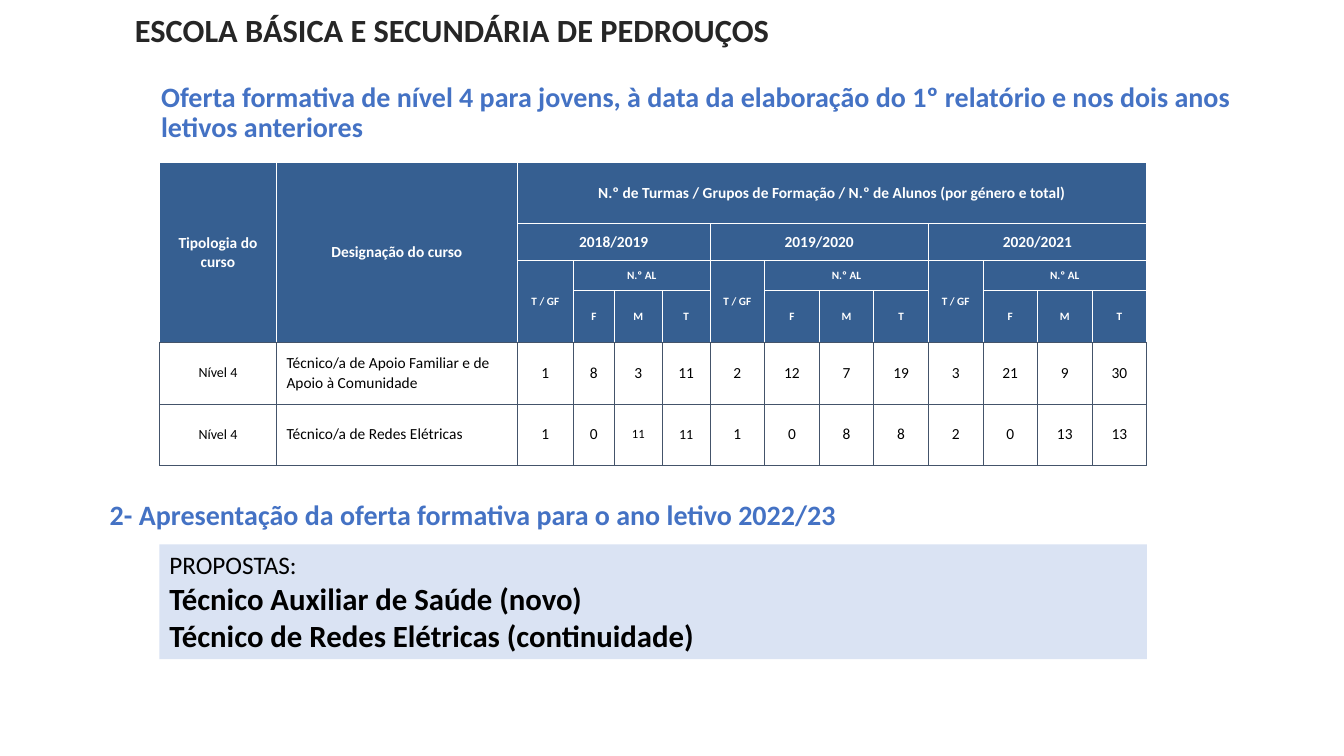
from lxml.etree import SubElement
from pptx import Presentation
from pptx.dml.color import RGBColor
from pptx.enum.shapes import MSO_SHAPE
from pptx.enum.text import MSO_ANCHOR, PP_ALIGN
from pptx.oxml.ns import qn
from pptx.util import Pt

WHITE = RGBColor(0xFF, 0xFF, 0xFF)
BLACK = RGBColor(0x00, 0x00, 0x00)
DARK = RGBColor(0x26, 0x26, 0x26)
BLUE = RGBColor(0x44, 0x72, 0xC4)
HEADER = RGBColor(0x36, 0x5F, 0x91)
SLATE = RGBColor(0x44, 0x54, 0x6A)
PALE = RGBColor(0xDA, 0xE3, 0xF3)


def add_run(p, text, size, color, bold):
    r = p.add_run()
    r.text = text
    r.font.name = "Calibri"
    r.font.size = Pt(size)
    r.font.color.rgb = color
    r.font.bold = bold


def set_border(cell, side, color):
    ln = SubElement(cell._tc.get_or_add_tcPr(), qn(f"a:ln{side}"), w=str(Pt(0.6)))
    fill = SubElement(ln, qn("a:solidFill"))
    SubElement(fill, qn("a:srgbClr"), val=str(color))


prs = Presentation()
prs.slide_width = Pt(960)
prs.slide_height = Pt(540)
s = prs.slides.add_slide(prs.slide_layouts[6])

headings = [
    ("ESCOLA BÁSICA E SECUNDÁRIA DE PEDROUÇOS",
     89.3, 3.6, 600, 34.6, 23.1, DARK, MSO_ANCHOR.TOP, 1),
    ("Oferta formativa de nível 4 para jovens, à data da elaboração do 1º relatório "
     "e nos dois anos letivos anteriores",
     108, 28.8, 785.5, 104.4, 20, BLUE, MSO_ANCHOR.MIDDLE, 0.9),
    ("2- Apresentação da oferta formativa para o ano letivo 2022/23",
     71.3, 352.1, 689.8, 31.7, 20, BLUE, MSO_ANCHOR.TOP, 1),
]
for text, left, top, width, height, size, color, anchor, spacing in headings:
    tf = s.shapes.add_textbox(Pt(left), Pt(top), Pt(width), Pt(height)).text_frame
    tf.word_wrap = True
    tf.vertical_anchor = anchor
    p = tf.paragraphs[0]
    p.line_spacing = spacing
    add_run(p, text, size, color, True)

col_widths = [83.6, 172.1, 40, 29.3, 34.2, 34.2] + [39] * 8
row_heights = [43.6, 26.2, 21.6, 36.7, 44.6, 43.2]
gf = s.shapes.add_table(len(row_heights), len(col_widths), Pt(113.9), Pt(116.2),
                        Pt(sum(col_widths)), Pt(sum(row_heights)))
table = gf.table
table.first_row = False
table.horz_banding = False
for col, width in zip(table.columns, col_widths):
    col.width = Pt(width)
for row, height in zip(table.rows, row_heights):
    row.height = Pt(height)

header = [
    (0, 0, 4, 1, "Tipologia do curso", 11),
    (0, 1, 4, 1, "Designação do curso", 11),
    (0, 2, 1, 12, "N.º de Turmas / Grupos de Formação / N.º de Alunos (por género e total)", 11),
]
for i, year in enumerate(["2018/2019", "2019/2020", "2020/2021"]):
    c = 2 + 4 * i
    header += [(1, c, 1, 4, year, 11), (2, c, 2, 1, "T / GF", 8), (2, c + 1, 1, 3, "N.º AL", 8)]
    header += [(3, c + 1 + j, 1, 1, label, 8) for j, label in enumerate("FMT")]

for r, c, rows, cols, text, size in header:
    cell = table.cell(r, c)
    if rows * cols > 1:
        cell.merge(table.cell(r + rows - 1, c + cols - 1))
    for side in "LRT":
        set_border(cell, side, WHITE)
    set_border(cell, "B", SLATE if r + rows == 4 else WHITE)
    cell.fill.solid()
    cell.fill.fore_color.rgb = HEADER
    cell.vertical_anchor = MSO_ANCHOR.MIDDLE
    p = cell.text_frame.paragraphs[0]
    p.alignment = PP_ALIGN.CENTER
    add_run(p, text, size, WHITE, True)

courses = [
    ["Nível 4", "Técnico/a de Apoio Familiar e de Apoio à Comunidade",
     1, 8, 3, 11, 2, 12, 7, 19, 3, 21, 9, 30],
    ["Nível 4", "Técnico/a de Redes Elétricas",
     1, 0, 11, 11, 1, 0, 8, 8, 2, 0, 13, 13],
]
small_sizes = {(4, 0): 10, (5, 0): 10, (5, 4): 9, (5, 5): 10}
for r, course in enumerate(courses, 4):
    for c, value in enumerate(course):
        cell = table.cell(r, c)
        for side in "LRTB":
            set_border(cell, side, SLATE)
        cell.fill.background()
        cell.vertical_anchor = MSO_ANCHOR.MIDDLE
        p = cell.text_frame.paragraphs[0]
        p.alignment = PP_ALIGN.LEFT if c == 1 else PP_ALIGN.CENTER
        add_run(p, str(value), small_sizes.get((r, c), 11), BLACK, False)

sp = s.shapes.add_shape(MSO_SHAPE.RECTANGLE, Pt(113.9), Pt(388.8), Pt(705.4), Pt(82.1))
sp.shadow.inherit = False
sp.fill.solid()
sp.fill.fore_color.rgb = PALE
sp.line.fill.background()
tf = sp.text_frame
tf.word_wrap = True
tf.vertical_anchor = MSO_ANCHOR.TOP
proposals = [
    ("PROPOSTAS:", 18, False),
    ("Técnico Auxiliar de Saúde (novo)", 22, True),
    ("Técnico de Redes Elétricas (continuidade)", 22, True),
]
for i, (text, size, bold) in enumerate(proposals):
    p = tf.add_paragraph() if i else tf.paragraphs[0]
    p.alignment = PP_ALIGN.LEFT
    add_run(p, text, size, BLACK, bold)

prs.save("out.pptx")
